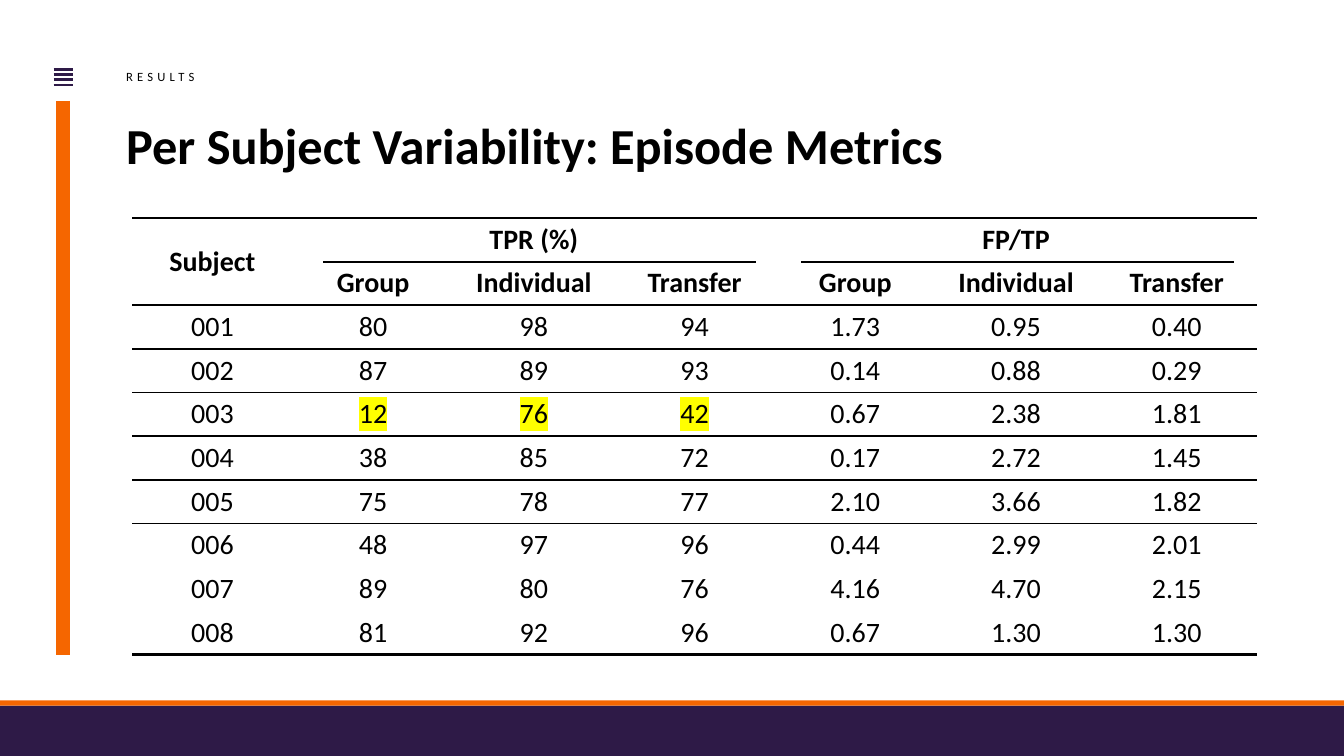
from dataclasses import dataclass

import pptx
import pptx.dml.color
import pptx.enum.shapes
import pptx.enum.text
import pptx.oxml.ns
import pptx.util
from lxml import etree

Cm = pptx.util.Cm
Pt = pptx.util.Pt
RGBColor = pptx.dml.color.RGBColor
qn = pptx.oxml.ns.qn

PURPLE = RGBColor(0x2E, 0x1A, 0x47)
ORANGE = RGBColor(0xF5, 0x66, 0x00)
BLACK = RGBColor(0, 0, 0)
YELLOW = RGBColor(0xFF, 0xFF, 0x00)

SLIDE_WIDTH, SLIDE_HEIGHT = 33.87, 19.05
COLUMN_WIDTH, ROW_HEIGHT = 4.05, 1.1
NO_STYLE = "{2D5ABB26-0587-4C30-8999-92F81FD0307C}"

METHODS = ["Group", "Individual", "Transfer"]
ROWS = [
    ["Subject", "TPR (%)", "", "", "FP/TP", "", ""],
    ["", *METHODS, *METHODS],
    ["001", "80", "98", "94", "1.73", "0.95", "0.40"],
    ["002", "87", "89", "93", "0.14", "0.88", "0.29"],
    ["003", "12", "76", "42", "0.67", "2.38", "1.81"],
    ["004", "38", "85", "72", "0.17", "2.72", "1.45"],
    ["005", "75", "78", "77", "2.10", "3.66", "1.82"],
    ["006", "48", "97", "96", "0.44", "2.99", "2.01"],
    ["007", "89", "80", "76", "4.16", "4.70", "2.15"],
    ["008", "81", "92", "96", "0.67", "1.30", "1.30"],
]
HEADER_ROWS = 2
MERGES = [((0, 0), (1, 0)), ((0, 1), (0, 3)), ((0, 4), (0, 6))]
HIGHLIGHTED = {(4, 1), (4, 2), (4, 3)}
# Rule weight in points, keyed by the row edge counted from the table top
RULES = {0: 2.25, **{edge: 1.5 for edge in range(2, 7)}, 10: 2.25}


@dataclass
class Line:
    left: float
    top: float
    right: float
    bottom: float
    color: RGBColor
    weight: float


@dataclass
class Band:
    top: float
    height: float
    color: RGBColor


@dataclass
class Label:
    text: str
    top: float
    width: float
    height: float
    line_spacing: float
    font: dict
    tracking: int = 0


LINES = [
    *[Line(1.35, 1.75 + 0.13 * bar, 1.85, 1.75 + 0.13 * bar, PURPLE, 1.75) for bar in range(4)],
    Line(1.6, 2.54, 1.6, 16.51, ORANGE, 10),
]
HEADER_LINES = [Line(left, 6.6, left + 10.9, 6.6, BLACK, 1) for left in (8.15, 20.19)]
BANDS = [Band(17.78, 1.27, PURPLE), Band(17.65, 0.13, ORANGE)]
LABELS = [
    Label("Per Subject Variability: Episode Metrics", 3.18, 23.95, 1.27, 0.8,
          {"name": "Calibri", "size": Pt(36), "bold": True}),
    Label("RESULTS", 1.78, 10.59, 0.36, 0.9,
          {"name": "Calibri", "size": Pt(9), "bold": False}, tracking=300),
]


def format_font(font, values: dict) -> None:
    font.color.rgb = BLACK
    for name, value in values.items():
        setattr(font, name, value)


def draw_line(page, line: Line) -> None:
    connector = page.shapes.add_connector(
        pptx.enum.shapes.MSO_CONNECTOR.STRAIGHT,
        Cm(line.left), Cm(line.top), Cm(line.right), Cm(line.bottom))
    connector.line.color.rgb = line.color
    connector.line.width = Pt(line.weight)
    etree.SubElement(connector._element.spPr, qn("a:effectLst"))


def draw_band(page, band: Band) -> None:
    shape = page.shapes.add_shape(
        pptx.enum.shapes.MSO_SHAPE.RECTANGLE,
        Cm(0), Cm(band.top), Cm(SLIDE_WIDTH), Cm(band.height))
    shape.shadow.inherit = False
    shape.fill.solid()
    shape.fill.fore_color.rgb = band.color
    shape.line.fill.background()


def draw_label(page, label: Label) -> None:
    box = page.shapes.add_textbox(Cm(3.18), Cm(label.top), Cm(label.width), Cm(label.height))
    frame = box.text_frame
    frame_format = {"word_wrap": True, "margin_left": 0, "margin_right": 0,
                    "margin_top": 0, "margin_bottom": 0}
    for name, value in frame_format.items():
        setattr(frame, name, value)
    para = frame.paragraphs[0]
    para.line_spacing = label.line_spacing
    span = para.add_run()
    span.text = label.text
    format_font(span.font, label.font)
    if label.tracking:
        span.font._element.set("spc", str(label.tracking))


def add_color(parent, color: RGBColor) -> None:
    etree.SubElement(parent, qn("a:srgbClr"), val=str(color))


def add_border(cell, side: str, weight: float) -> None:
    properties = cell._tc.get_or_add_tcPr()
    border = etree.SubElement(properties, qn(side), w=str(int(Pt(weight))))
    add_color(etree.SubElement(border, qn("a:solidFill")), BLACK)


def highlight(span) -> None:
    marker = etree.Element(qn("a:highlight"))
    add_color(marker, YELLOW)
    span.font._element.find(qn("a:solidFill")).addnext(marker)


def fill_cell(cell, row: int, column: int, text: str) -> None:
    # Borders come before the fill in the cell properties
    for side, edge in (("a:lnT", row), ("a:lnB", row + cell.span_height)):
        if edge in RULES:
            add_border(cell, side, RULES[edge])
    cell.fill.background()
    cell_format = {"margin_top": Cm(0.1), "margin_bottom": Cm(0.1),
                   "vertical_anchor": pptx.enum.text.MSO_ANCHOR.MIDDLE}
    for name, value in cell_format.items():
        setattr(cell, name, value)
    para = cell.text_frame.paragraphs[0]
    para.alignment = pptx.enum.text.PP_ALIGN.CENTER
    font_values = {"name": "Calibri", "size": Pt(20), "bold": row < HEADER_ROWS}
    if not text:
        format_font(para.font, font_values)
        return
    span = para.add_run()
    span.text = text
    format_font(span.font, font_values)
    if (row, column) in HIGHLIGHTED:
        highlight(span)


def draw_table(page) -> None:
    row_count, column_count = len(ROWS), len(ROWS[0])
    frame = page.shapes.add_table(
        row_count, column_count, Cm(3.33), Cm(5.49),
        Cm(COLUMN_WIDTH * column_count), Cm(ROW_HEIGHT * row_count))
    table = frame.table
    table.first_row = table.horz_banding = False
    table._tbl.tblPr.find(qn("a:tableStyleId")).text = NO_STYLE
    for column in table.columns:
        column.width = Cm(COLUMN_WIDTH)
    for row in table.rows:
        row.height = Cm(ROW_HEIGHT)
    for first, last in MERGES:
        table.cell(*first).merge(table.cell(*last))
    for row, texts in enumerate(ROWS):
        for column, text in enumerate(texts):
            fill_cell(table.cell(row, column), row, column, text)


def main() -> None:
    deck = pptx.Presentation()
    deck.slide_width, deck.slide_height = Cm(SLIDE_WIDTH), Cm(SLIDE_HEIGHT)
    page = deck.slides.add_slide(deck.slide_layouts[6])

    # Side marks and footer
    for line in LINES:
        draw_line(page, line)
    for band in BANDS:
        draw_band(page, band)

    # Title and section name
    for label in LABELS:
        draw_label(page, label)

    # Metrics table with lines under the column groups
    draw_table(page)
    for line in HEADER_LINES:
        draw_line(page, line)

    deck.save("out.pptx")


if __name__ == "__main__":
    main()
